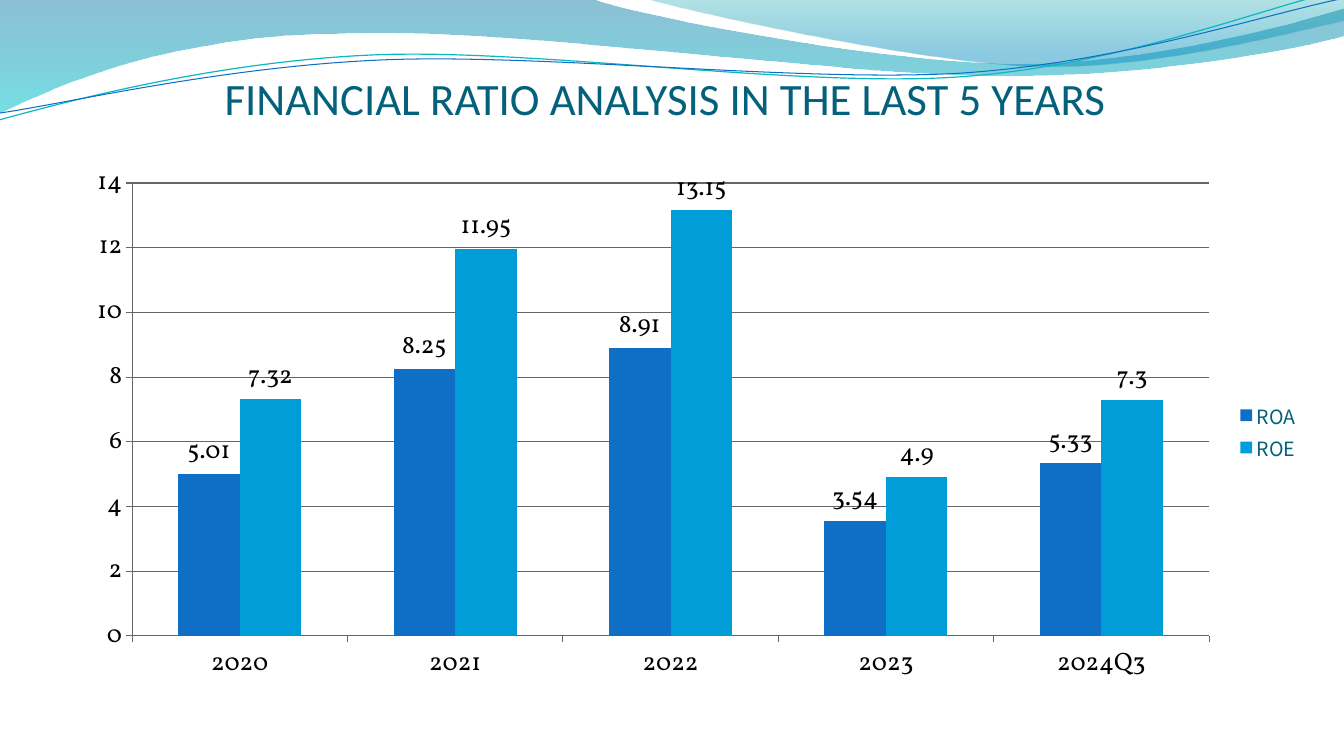
from lxml.etree import SubElement
from pptx import Presentation
from pptx.chart.data import CategoryChartData
from pptx.dml.color import RGBColor
from pptx.enum.chart import XL_CHART_TYPE, XL_LABEL_POSITION, XL_LEGEND_POSITION, XL_TICK_MARK
from pptx.enum.text import MSO_ANCHOR, MSO_AUTO_SIZE, PP_ALIGN
from pptx.oxml import parse_xml
from pptx.oxml.ns import nsdecls, qn
from pptx.util import Pt

PX = 914400 / 100.8
SLIDE = (1344, 756)
TITLE = "FINANCIAL RATIO ANALYSIS IN THE LAST 5 YEARS"
TITLE_BOX = (174, 64, 983, 61)
CHART_BOX = (73, 154, 1238, 537)
PLOT_BOX = (132, 183, 1077, 453)
LEGEND_CORNER = (1234, 397)
YEARS = ["2020", "2021", "2022", "2023", "2024Q3"]
RATIOS = [
    ("ROA", "0F6FC6", [5.01, 8.25, 8.91, 3.54, 5.33]),
    ("ROE", "009DD9", [7.32, 11.95, 13.15, 4.9, 7.3]),
]
# A pair is a straight step; three pairs are a Bezier step.
# Gradient stops: position %, colour, opacity %.
BANDS = [
    ([(0, -1), (592, -1), (639, 17, 892, 64, 1019, 64), (1147, 64, 1288, 26, 1344, 9),
      (1346, 36), (1321, 44, 1169, 77, 1002, 76), (836, 76, 513, 28, 346, 34),
      (173, 35, 61, 84, -1, 114)],
     [(0, "0074A1", 45), (100, "00C6CF", 55)]),
    ([(644, -1), (684, 11, 916, 62, 1033, 66), (1150, 70, 1292, 32, 1344, 21), (1344, 0)],
     [(0, "00A1A9", 30), (80, "008BBF", 45)]),
]
WAVES = [
    ([(-1, 120), (65, 102, 213, 62, 372, 55), (531, 48, 796, 88, 958, 77),
      (1119, 66, 1262, 8, 1342, -10)], "0AB8BF", 0.85),
    ([(0, 113), (64, 104, 220, 67, 381, 60), (541, 53, 802, 83, 963, 73),
      (1124, 62, 1266, 14, 1345, -2)], "0F6FC6", 0.75),
]


def emu(*lengths):
    return [round(v * PX) for v in lengths]


def rgb(color):
    return RGBColor.from_string(color)


def set_font(font, name, size, color):
    font.name, font.size, font.bold = name, Pt(size), False
    font.color.rgb = rgb(color)


def add_outline(slide, steps, close):
    """Build a freeform through the step ends, then bend its Bezier steps."""
    start, *ends = [emu(*step[-2:]) for step in steps]
    builder = slide.shapes.build_freeform(*start)
    builder.add_line_segments(ends, close=close)
    sp = builder.convert_to_shape()
    sp.shadow.inherit = False
    for step, line in zip(steps[1:], list(sp._element.iter(qn("a:lnTo")))):
        if len(step) == 6:
            curve = parse_xml(f'<a:cubicBezTo {nsdecls("a")}/>')
            for x, y in zip(emu(*step[::2]), emu(*step[1::2])):
                SubElement(curve, qn("a:pt"), x=str(x - sp.left), y=str(y - sp.top))
            line.getparent().replace(line, curve)
    return sp


def add_band(slide, steps, stops):
    sp = add_outline(slide, steps, True)
    sp.line.fill.background()
    sp.fill.gradient()
    sp.fill.gradient_angle = 270
    gs_list = sp._element.spPr.find(qn("a:gradFill")).find(qn("a:gsLst"))
    for gs in list(gs_list):
        gs_list.remove(gs)
    for position, color, opacity in stops:
        gs = SubElement(gs_list, qn("a:gs"), pos=str(position * 1000))
        clr = SubElement(gs, qn("a:srgbClr"), val=color)
        SubElement(clr, qn("a:alpha"), val=str(opacity * 1000))


def add_wave(slide, steps, color, width):
    sp = add_outline(slide, steps, False)
    sp.fill.background()
    sp.line.color.rgb = rgb(color)
    sp.line.width = Pt(width)


def set_title(slide):
    sp = slide.shapes.title
    sp._element.getparent().append(sp._element)
    sp.left, sp.top, sp.width, sp.height = emu(*TITLE_BOX)
    tf = sp.text_frame
    tf.text = TITLE
    tf.word_wrap = True
    tf.auto_size = MSO_AUTO_SIZE.NONE
    tf.vertical_anchor = MSO_ANCHOR.BOTTOM
    tf.margin_left = tf.margin_right = tf.margin_bottom = 0
    p = tf.paragraphs[0]
    p.alignment = PP_ALIGN.CENTER
    set_font(p.runs[0].font, "Calibri", 32, "04617B")


def place(part, index, target, x, y, w=None, h=None):
    """Fix a chart part's layout as fractions of the chart frame."""
    left, top, width, height = CHART_BOX
    sizes = {"x": (x - left) / width, "y": (y - top) / height}
    if w:
        sizes.update(w=w / width, h=h / height)
    modes = "".join(f'<c:{k}Mode val="edge"/>' for k in "xy")
    values = "".join(f'<c:{k} val="{v:.4f}"/>' for k, v in sizes.items())
    for old in part.findall(qn("c:layout")):
        part.remove(old)
    part.insert(index, parse_xml(
        f'<c:layout {nsdecls("c")}><c:manualLayout>{target}{modes}{values}'
        f'</c:manualLayout></c:layout>'))


def add_ratio_chart(slide):
    data = CategoryChartData()
    data.categories = YEARS
    for name, _, values in RATIOS:
        data.add_series(name, values)
    chart = slide.shapes.add_chart(XL_CHART_TYPE.COLUMN_CLUSTERED, *emu(*CHART_BOX), data).chart
    set_font(chart.font, "Vollkorn", 18, "000000")
    chart.has_title = False
    chart.has_legend = True
    chart.legend.position = XL_LEGEND_POSITION.RIGHT
    chart.legend.include_in_layout = False
    set_font(chart.legend.font, "Noto Sans CJK SC", 14, "04617B")

    value_axis = chart.value_axis
    value_axis.minimum_scale, value_axis.maximum_scale, value_axis.major_unit = 0, 14, 2
    value_axis.has_major_gridlines = True
    for axis in (chart.category_axis, value_axis):
        axis.major_tick_mark = XL_TICK_MARK.OUTSIDE
        axis.minor_tick_mark = XL_TICK_MARK.NONE
    for part in (chart.category_axis, value_axis, value_axis.major_gridlines):
        part.format.line.color.rgb = rgb("666666")
        part.format.line.width = Pt(0.75)

    plot = chart.plots[0]
    plot.gap_width, plot.overlap, plot.vary_by_categories = 150, 0, False
    for series, (_, color, _) in zip(plot.series, RATIOS):
        series.format.fill.solid()
        series.format.fill.fore_color.rgb = rgb(color)
        labels = series.data_labels
        labels.show_value = True
        labels.position = XL_LABEL_POSITION.OUTSIDE_END
    chart_xml = chart._chartSpace.chart
    place(chart_xml.plotArea, 0, '<c:layoutTarget val="inner"/>', *PLOT_BOX)
    place(chart_xml.find(qn("c:legend")), 1, "", *LEGEND_CORNER)


def main():
    prs = Presentation()
    prs.slide_width, prs.slide_height = emu(*SLIDE)
    slide = prs.slides.add_slide(prs.slide_layouts[5])
    for band in BANDS:
        add_band(slide, *band)
    for wave in WAVES:
        add_wave(slide, *wave)
    set_title(slide)
    add_ratio_chart(slide)
    prs.save("out.pptx")


if __name__ == "__main__":
    main()
